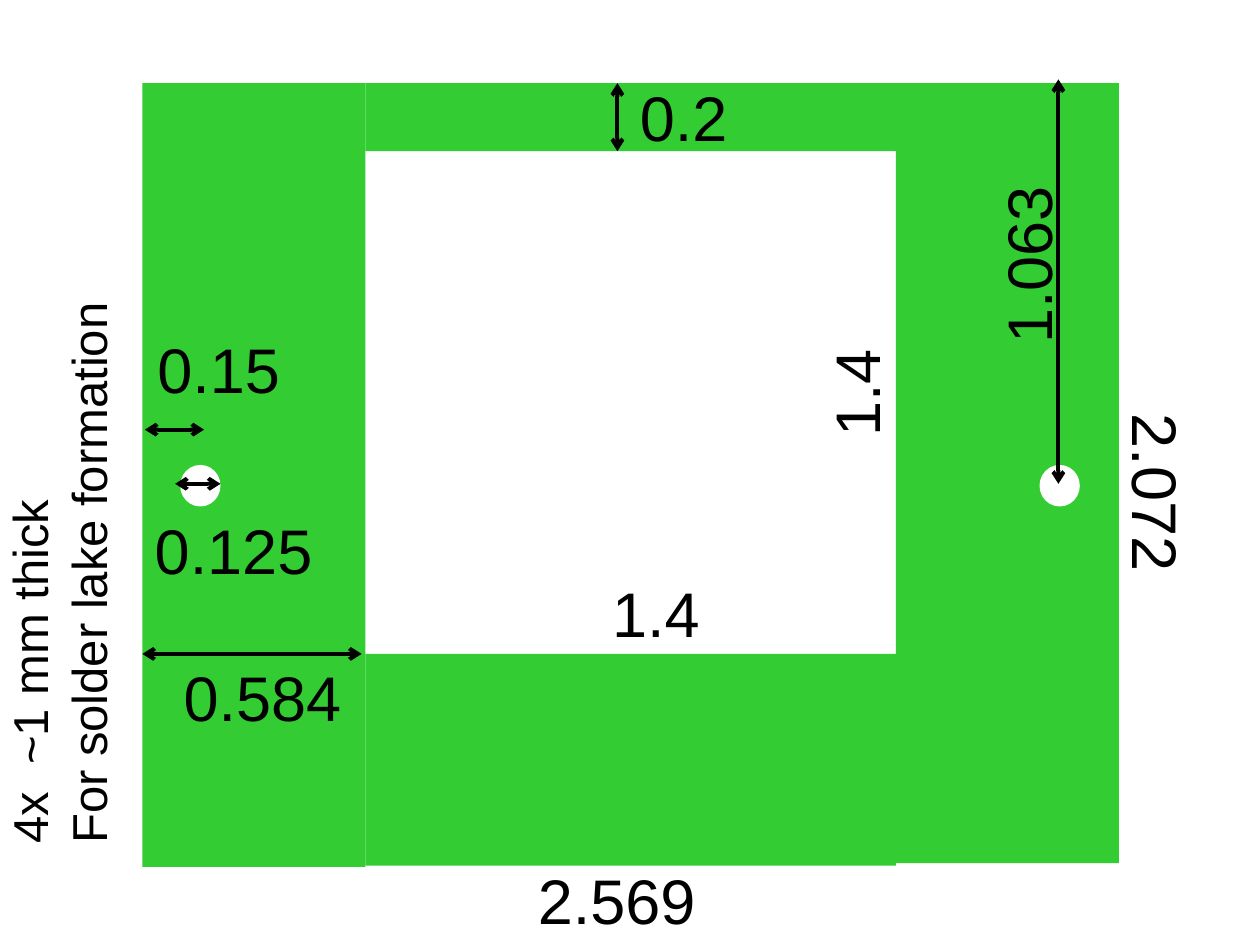
"""Dimensioned drawing of a solder lake frame, on a grid of 100 columns by 75 rows."""
from pptx import Presentation
from pptx.dml.color import RGBColor
from pptx.enum.shapes import MSO_CONNECTOR, MSO_SHAPE
from pptx.enum.text import MSO_AUTO_SIZE
from pptx.oxml.ns import qn
from pptx.util import Inches, Pt
from lxml import etree

RECT, OVAL = MSO_SHAPE.RECTANGLE, MSO_SHAPE.OVAL
STRAIGHT = MSO_CONNECTOR.STRAIGHT
FIT = MSO_AUTO_SIZE.SHAPE_TO_FIT_TEXT
GREEN = RGBColor(0x33, 0xCC, 0x33)
WHITE = RGBColor(0xFF, 0xFF, 0xFF)
BLACK = RGBColor(0, 0, 0)

COLUMNS, ROWS = 100, 75
CELL = Inches(0.1)
LEFT, INNER_LEFT, INNER_RIGHT = 11.3, 29, 71.1
TOP, INNER_TOP, INNER_BOTTOM = 6.6, 12, 51.9
SIDE = INNER_LEFT - LEFT
OPENING = INNER_RIGHT - INNER_LEFT
HOLE_TOP, HOLE_MIDDLE = 36.9, 38.4

FRAME = [
    (LEFT, TOP, SIDE, 62.2),
    (INNER_RIGHT, TOP, SIDE, 61.9),
    (INNER_LEFT, INNER_BOTTOM, OPENING, 16.8),
    (INNER_LEFT, TOP, OPENING, INNER_TOP - TOP),
]
HOLE_COLUMNS = (14.3, 82.5)
DIMENSIONS = [
    ("0.125", 11.3, 40.1, 0),
    ("2.072", 84.5, 35.6, 90),
    ("2.569", 41.7, 67.9, 0),
    ("1.4", 47.6, 45.1, 0),
    ("1.4", 63.4, 27.6, 270),
    ("0.2", 49.8, 5.7, 0),
    ("1.063", 74.3, 17.4, 270),
    ("0.584", 13.6, 51.8, 0),
    ("0.15", 11.5, 25.7, 0),
]
ARROWS = [
    (84, HOLE_MIDDLE, 84, 6.3),
    (28.7, INNER_BOTTOM, LEFT, INNER_BOTTOM),
    (16.2, 34.1, 11.5, 34.1),
    (17.5, HOLE_MIDDLE, 13.9, HOLE_MIDDLE),
    (49, INNER_TOP, 49, TOP),
]
NOTE = ["4x  ~1 mm thick", "For solder lake formation"]


def cells(*counts):
    """Turn counts of grid cells into lengths."""
    return [round(n * CELL) for n in counts]


def add_plain(slide, kind, box, color):
    """Add a filled shape without outline."""
    sp = slide.shapes.add_shape(kind, *cells(*box))
    sp.shadow.inherit = False
    sp.fill.solid()
    sp.fill.fore_color.rgb = color
    sp.line.fill.background()


def add_text(slide, lines, box, size, rotation=0, wrap=False):
    """Add a turned text box with one paragraph per line."""
    sp = slide.shapes.add_textbox(*cells(*box))
    sp.rotation = rotation
    tf = sp.text_frame
    tf.word_wrap = wrap
    tf.auto_size = FIT
    tf.text = "\n".join(lines)
    font_values = {"name": "Arial", "size": Pt(size)}
    for p in tf.paragraphs:
        for r in p.runs:
            for name, value in font_values.items():
                setattr(r.font, name, value)
            r.font.color.rgb = BLACK


def add_dimension(slide, text, left, top, rotation):
    """Add a measure in a box as wide as its characters need."""
    width = 0.6 + 2.8 * len(text)
    add_text(slide, [text], (left, top, width, 7.1), 36, rotation)


def add_arrow(slide, ends):
    """Add a line with an arrowhead at both ends."""
    cxn = slide.shapes.add_connector(STRAIGHT, *cells(*ends))
    cxn.line.color.rgb = BLACK
    cxn.line.width = Pt(2.25)
    ln = cxn.line._get_or_add_ln()
    for tag in ("a:headEnd", "a:tailEnd"):
        etree.SubElement(ln, qn(tag), type="arrow")
    etree.SubElement(cxn._element.spPr, qn("a:effectLst"))


def main():
    """Build the slide and save it."""
    prs = Presentation()
    prs.slide_width, prs.slide_height = cells(COLUMNS, ROWS)
    slide = prs.slides.add_slide(prs.slide_layouts[6])
    for box in FRAME:
        add_plain(slide, RECT, box, GREEN)
    for column in HOLE_COLUMNS:
        add_plain(slide, OVAL, (column, HOLE_TOP, 3.2, 3.3), WHITE)
    add_text(slide, NOTE, (-26, 32.1, 61.3, 10.4), 28, 270, wrap=True)
    for dimension in DIMENSIONS:
        add_dimension(slide, *dimension)
    for ends in ARROWS:
        add_arrow(slide, ends)
    prs.save("out.pptx")


if __name__ == "__main__":
    main()
